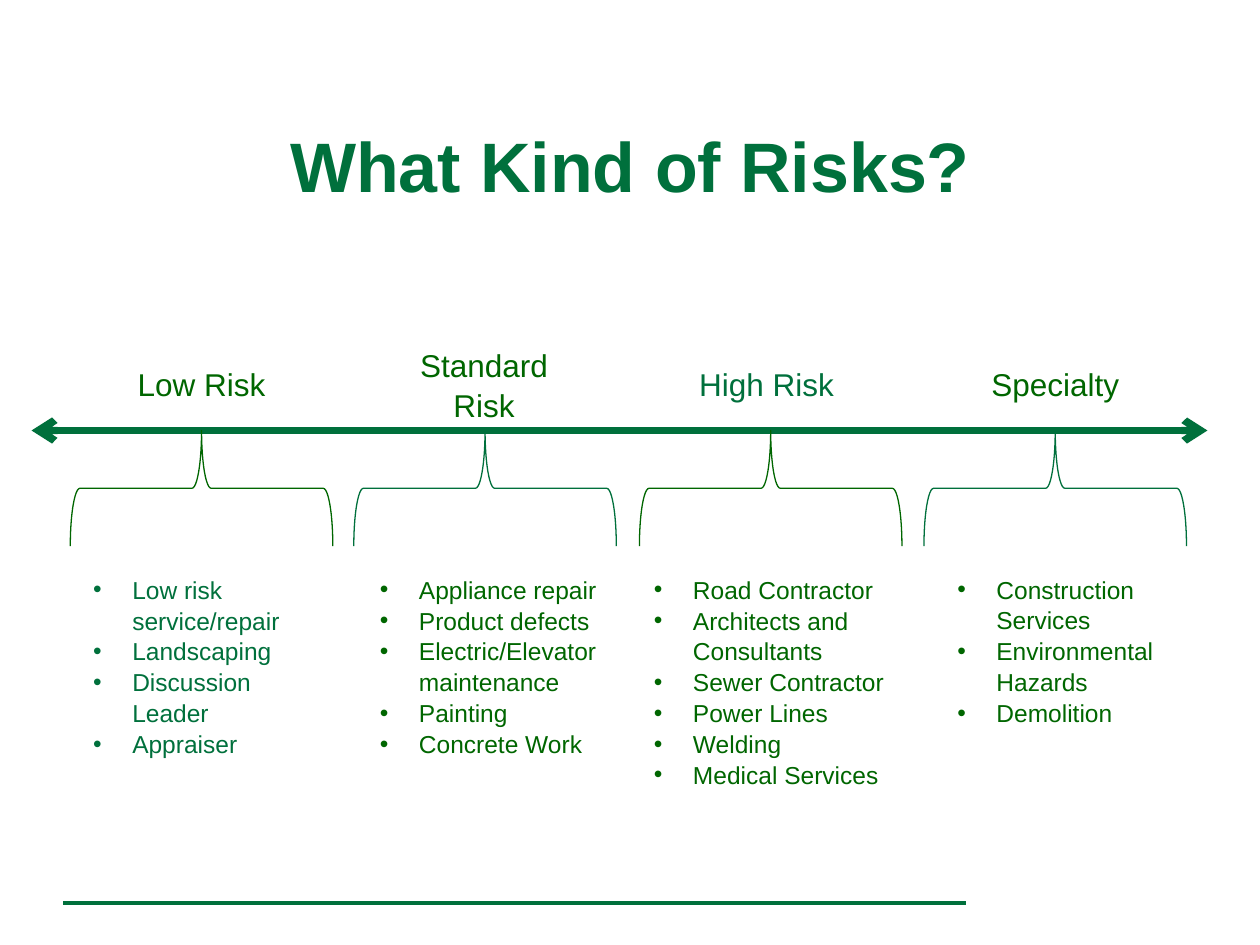
from lxml.etree import SubElement
from pptx import Presentation
from pptx.dml.color import RGBColor
from pptx.enum.shapes import MSO_CONNECTOR, MSO_SHAPE
from pptx.enum.text import MSO_ANCHOR, PP_ALIGN
from pptx.oxml.ns import qn
from pptx.util import Inches, Pt

COLORS = {"brand": "00703C", "leaf": "006600"}
COLS, ROWS = 120, 90  # grid cells across and down


class Deck:
    font = "Arial"
    spacing = 1.05

    def __init__(self):
        self.prs = Presentation()
        self.prs.slide_width, self.prs.slide_height = Inches(10), Inches(7.5)
        self.slide = self.prs.slides.add_slide(self.prs.slide_layouts[6])

    def x(self, cols):
        return round(self.prs.slide_width * cols / COLS)

    def y(self, rows):
        return round(self.prs.slide_height * rows / ROWS)

    def area(self, left, top, width, height):
        return self.x(left), self.y(top), self.x(width), self.y(height)

    def color(self, name):
        return RGBColor.from_string(COLORS[name])

    def rule(self, left, right, row, weight, arrows=False):
        line = self.slide.shapes.add_connector(
            MSO_CONNECTOR.STRAIGHT, self.x(left), self.y(row), self.x(right), self.y(row))
        line.line.color.rgb = self.color("brand")
        line.line.width = Pt(weight)
        if arrows:
            for end in ("a:headEnd", "a:tailEnd"):
                SubElement(line.line._get_or_add_ln(), qn(end), type="arrow")
        SubElement(line._element.spPr, qn("a:effectLst"))

    def brace(self, left, top, width, height, color):
        shape = self.slide.shapes.add_shape(
            MSO_SHAPE.RIGHT_BRACE, *self.area(left, top, width, height))
        shape.rotation = 270
        shape.shadow.inherit = False
        shape.fill.background()
        shape.line.color.rgb = self.color(color)
        shape.line.width = Pt(0.75)

    def text(self, area, lines, size, color, bold=False, bullet=False, anchor=MSO_ANCHOR.TOP):
        frame = self.slide.shapes.add_textbox(*self.area(*area)).text_frame
        frame.word_wrap = True
        frame.vertical_anchor = anchor
        frame.text = "\n".join(lines)
        for para in frame.paragraphs:
            para.line_spacing = self.spacing
            para.alignment = PP_ALIGN.LEFT if bullet else PP_ALIGN.CENTER
            if bullet:
                props = para._p.get_or_add_pPr()
                props.set("marL", str(Inches(0.31)))
                props.set("indent", str(Inches(-0.31)))
                SubElement(props, qn("a:buFont"), typeface=self.font)
                SubElement(props, qn("a:buChar"), char="•")
            font = para.font
            font.name, font.size, font.bold = self.font, Pt(size), bold
            font.color.rgb = self.color(color)


# Each risk: brace (left, color), label (text, box, color), list (left, width, rows, color, items)
RISKS = [
    ((13.7, "leaf"), ("Low Risk", (7.7, 34, 23, 4.8), "leaf"),
     (7.7, 23, 18.1, "brand",
      ["Low risk service/repair", "Landscaping", "Discussion Leader", "Appraiser"])),
    ((40.7, "brand"), ("Standard Risk", (36.6, 32.2, 19, 8.5), "leaf"),
     (35, 23.6, 18.1, "leaf",
      ["Appliance repair", "Product defects", "Electric/Elevator maintenance",
       "Painting", "Concrete Work"])),
    ((67.9, "leaf"), ("High Risk", (63, 34, 20, 4.8), "brand"),
     (61.1, 25, 21, "leaf",
      ["Road Contractor", "Architects and Consultants", "Sewer Contractor",
       "Power Lines", "Welding", "Medical Services"])),
    ((95, "brand"), ("Specialty", (90, 34, 21, 4.8), "leaf"),
     (90, 25, 15.4, "leaf",
      ["Construction Services", "Environmental Hazards", "Demolition"])),
]


def main():
    deck = Deck()

    # Footer rule, title and risk scale
    deck.rule(6, 92, 86, 2.5)
    deck.text((0, 8, COLS, 15), ["What Kind of Risks?"], 40, "brand",
              bold=True, anchor=MSO_ANCHOR.MIDDLE)
    deck.rule(3, 115, 41, 4.25, arrows=True)

    # One brace, label and list for each risk
    for (edge, tint), (name, box, hue), (left, width, rows, shade, items) in RISKS:
        deck.brace(edge, 34, 11, 25, tint)
        deck.text(box, [name], 18, hue)
        deck.text((left, 54, width, rows), items, 14, shade, bullet=True)

    deck.prs.save("out.pptx")


if __name__ == "__main__":
    main()
